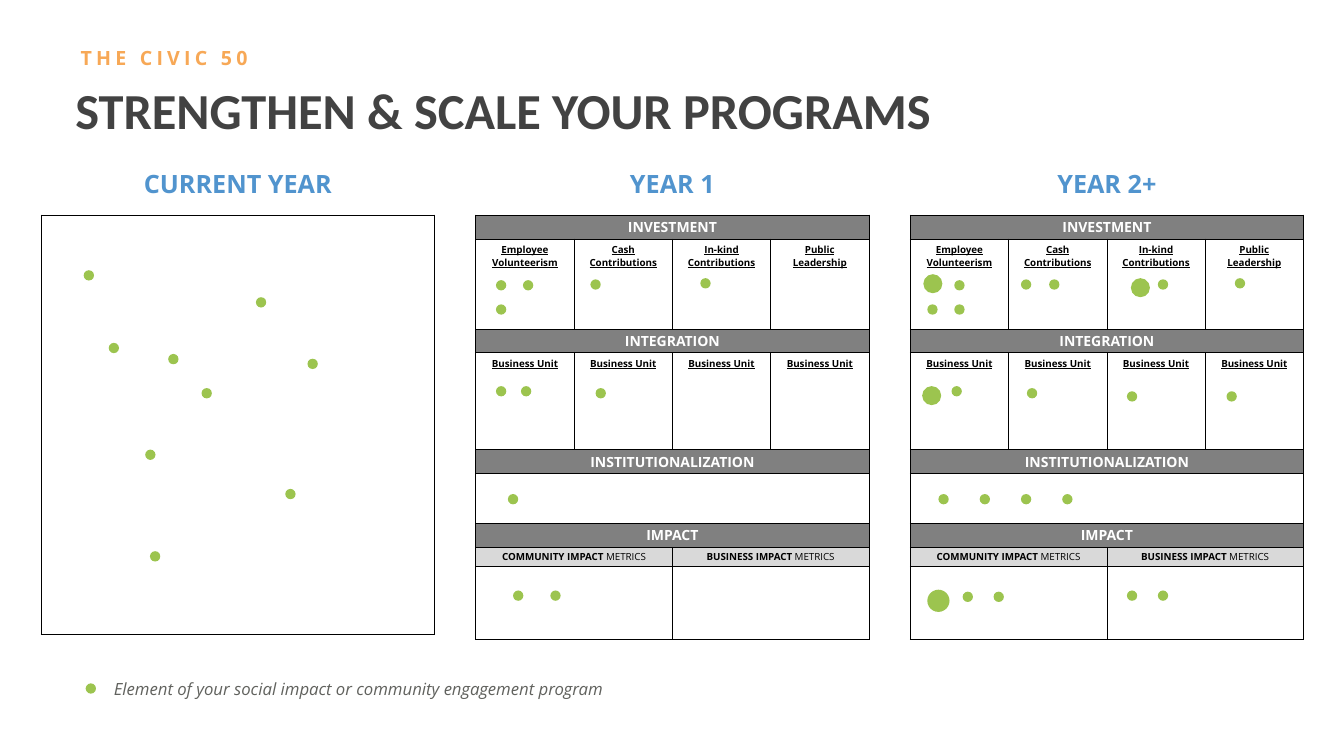
"""Build the slide on strengthening and scaling programs over the years."""
import pptx
import pptx.dml.color
import pptx.enum.shapes
import pptx.enum.text
import pptx.oxml
import pptx.oxml.ns
import pptx.util

Cm, Pt = pptx.util.Cm, pptx.util.Pt
ALIGN = pptx.enum.text.PP_ALIGN
ANCHOR = pptx.enum.text.MSO_ANCHOR

COLORS = {
    "title": "424242", "orange": "F7A856", "blue": "5194CE", "green": "9CC44F",
    "note": "61625E", "header": "808080", "subheader": "D9D9D9",
    "white": "FFFFFF", "black": "000000",
}
TABLE_LEFT, TABLE_TOP, TABLE_WIDTH, TABLE_PITCH = 1.04, 5.42, 9.91, 10.95
DOT = 0.26
YEAR_ROWS = [0.6, 2.27, 0.6, 2.44, 0.6, 1.26, 0.6, 0.48, 1.84]
HEADERS = {0: "INVESTMENT", 2: "INTEGRATION", 4: "INSTITUTIONALIZATION", 6: "IMPACT"}
LABELS = {
    1: ["Employee Volunteerism", "Cash Contributions", "In-kind Contributions",
        "Public\nLeadership"],
    3: ["Business Unit"] * 4,
}
METRICS = {0: "COMMUNITY IMPACT", 2: "BUSINESS IMPACT"}
HEADINGS = [("CURRENT YEAR", 5.28), ("YEAR 1", 2.67), ("YEAR 2+", 3.02)]

CURRENT_DOTS = [
    (2.11, 6.81), (6.45, 7.49), (2.74, 8.64), (4.24, 8.92), (7.75, 9.04),
    (5.08, 9.78), (3.66, 11.33), (7.19, 12.32), (3.78, 13.89),
]
YEAR_1_DOTS = [
    (12.5, 7.06), (13.18, 7.06), (12.5, 7.67), (14.88, 7.04), (17.65, 7.01),
    (12.5, 9.73), (13.13, 9.73), (15.01, 9.78),
    (12.8, 12.45), (12.93, 14.88), (13.87, 14.88),
]
YEAR_2_DOTS = [
    (23.27, 6.91, 0.48), (24.05, 7.06), (23.37, 7.67), (24.05, 7.67),
    (25.73, 7.04), (26.44, 7.04), (28.5, 7.01, 0.48), (29.18, 7.04), (31.12, 7.01),
    (23.24, 9.73, 0.48), (23.98, 9.73), (25.88, 9.78), (28.4, 9.86), (30.91, 9.86),
    (23.65, 12.45), (24.69, 12.45), (25.73, 12.45), (26.77, 12.45),
    (23.37, 14.86, 0.56), (24.26, 14.91), (25.04, 14.91), (28.4, 14.88), (29.18, 14.88),
]
LEGEND_DOT = (2.16, 17.22)


def rgb(name):
    """Return the named colour."""
    return pptx.dml.color.RGBColor.from_string(COLORS[name])


def add_text(p, text, size=7, color="black", font="Open Sans", bold=False,
             italic=False, underline=False, spacing=None):
    """Add one formatted run to a paragraph."""
    r = p.add_run()
    r.text = text
    f = r.font
    f.size, f.name, f.bold, f.italic = Pt(size), font, bold, italic
    f.underline = underline
    f.color.rgb = rgb(color)
    if spacing:
        r._r.get_or_add_rPr().set("spc", str(spacing * 100))


def add_box(s, text, left, top, width, height, align=ALIGN.LEFT, line=1.0,
            wrap=False, **fmt):
    """Add a text box holding one line."""
    tf = s.shapes.add_textbox(Cm(left), Cm(top), Cm(width), Cm(height)).text_frame
    tf.word_wrap = wrap
    p = tf.paragraphs[0]
    p.alignment, p.line_spacing = align, line
    add_text(p, text, **fmt)


def add_dot(s, left, top, size=DOT):
    """Add a green dot."""
    sp = s.shapes.add_shape(pptx.enum.shapes.MSO_SHAPE.OVAL,
                            Cm(left), Cm(top), Cm(size), Cm(size))
    sp.shadow.inherit = False
    sp.fill.solid()
    sp.fill.fore_color.rgb = rgb("green")
    sp.line.fill.background()


def add_grid(s, index, heights, columns):
    """Add an unfilled table with thin black borders."""
    table = s.shapes.add_table(
        len(heights), columns, Cm(TABLE_LEFT + index * TABLE_PITCH), Cm(TABLE_TOP),
        Cm(TABLE_WIDTH), Cm(sum(heights))).table
    table.first_row = table.horz_banding = False
    for column in table.columns:
        column.width = Cm(TABLE_WIDTH / columns)
    for row, height in zip(table.rows, heights):
        row.height = Cm(height)
    for cell in table.iter_cells():
        cell.margin_left = cell.margin_right = Cm(0.18)
        cell.margin_top = cell.margin_bottom = Cm(0.1)
        for side in ("lnL", "lnR", "lnT", "lnB"):
            cell._tc.get_or_add_tcPr().append(pptx.oxml.parse_xml(
                f'<a:{side} {pptx.oxml.ns.nsdecls("a")} w="7620"><a:solidFill>'
                f'<a:srgbClr val="{COLORS["black"]}"/></a:solidFill></a:{side}>'))
        cell.fill.background()
    return table


def style_band(cell, color):
    """Fill a heading cell, tighten it and return its centred paragraph."""
    cell.fill.solid()
    cell.fill.fore_color.rgb = rgb(color)
    cell.margin_top = cell.margin_bottom = Cm(0.05)
    cell.vertical_anchor = ANCHOR.MIDDLE
    p = cell.text_frame.paragraphs[0]
    p.alignment = ALIGN.CENTER
    return p


def add_year_table(s, index):
    """Add the four-section table of one planned year."""
    table = add_grid(s, index, YEAR_ROWS, 4)
    for row in (*HEADERS, 5):
        table.cell(row, 0).merge(table.cell(row, 3))
    for row in (7, 8):
        for col in METRICS:
            table.cell(row, col).merge(table.cell(row, col + 1))
    for row, text in HEADERS.items():
        p = style_band(table.cell(row, 0), "header")
        add_text(p, text, size=10, color="white", bold=True)
    for row, labels in LABELS.items():
        for col, label in enumerate(labels):
            tf = table.cell(row, col).text_frame
            for i, text in enumerate(label.split("\n")):
                p = tf.add_paragraph() if i else tf.paragraphs[0]
                p.alignment = ALIGN.CENTER
                add_text(p, text, bold=True, underline=True)
    for col, text in METRICS.items():
        p = style_band(table.cell(7, col), "subheader")
        add_text(p, text, bold=True)
        add_text(p, " METRICS")


def main():
    """Build and save the slide."""
    prs = pptx.Presentation()
    prs.slide_width, prs.slide_height = Cm(33.87), Cm(19.05)
    s = prs.slides.add_slide(prs.slide_layouts[6])
    add_box(s, "STRENGTHEN & SCALE YOUR PROGRAMS", 1.65, 1.88, 30.15, 1.8, wrap=True,
            size=36, color="title", font="Calibri", bold=True)
    add_box(s, "THE CIVIC 50", 1.78, 1.04, 4.85, 0.86,
            size=14, color="orange", bold=True, spacing=3)
    for index, (text, width) in enumerate(HEADINGS):
        center = TABLE_LEFT + index * TABLE_PITCH + TABLE_WIDTH / 2
        add_box(s, text, center - width / 2, 4.03, width, 1.07, align=ALIGN.CENTER,
                line=1.1, size=18, color="blue", bold=True)
    add_grid(s, 0, [10.57], 1)
    for index in (1, 2):
        add_year_table(s, index)
    for dot in [*CURRENT_DOTS, *YEAR_1_DOTS, *YEAR_2_DOTS, LEGEND_DOT]:
        add_dot(s, *dot)
    add_box(s, "Element of your social impact or community engagement program",
            2.62, 16.97, 13.16, 0.76, size=12, color="note", italic=True)
    prs.save("out.pptx")


if __name__ == "__main__":
    main()
